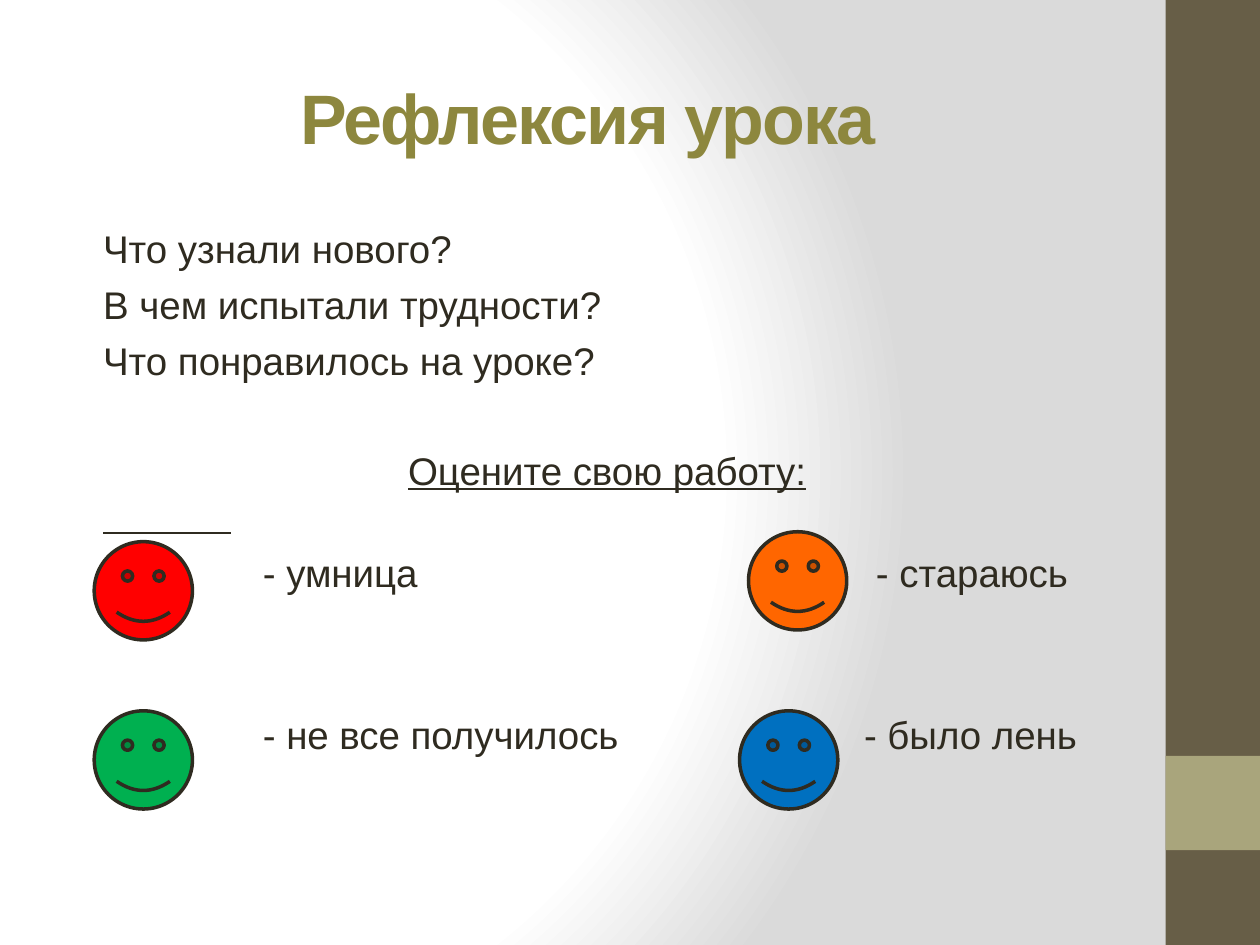
from lxml import etree
from pptx import Presentation
from pptx.dml.color import RGBColor
from pptx.enum.shapes import MSO_CONNECTOR, MSO_SHAPE as Preset
from pptx.enum.text import MSO_ANCHOR as Anchor, PP_ALIGN as Align
from pptx.oxml import parse_xml
from pptx.oxml.ns import qn
from pptx.util import Cm, Pt

COLORS = {"ink": "2F2B20", "title": "8D873E", "band": "675E47", "accent": "A9A57C",
          "red": "FF0000", "green": "00B050", "orange": "FF6600", "blue": "0070C0",
          "white": "FFFFFF", "gray": "DADADA"}
TITLE = "Рефлексия урока"
QUESTIONS = ["Что узнали нового?", "В чем испытали трудности?", "Что понравилось на уроке?"]
HEADING = "Оцените свою работу:"
# label, face colour, face left and top, label left and top (cm)
GRADES = [
    ("- умница", "red", 1.9, 10.92, 5.3, 11.07),
    ("- не все получилось", "green", 1.9, 14.33, 5.3, 14.34),
    ("- стараюсь", "orange", 15.09, 10.72, 17.66, 11.07),
    ("- было лень", "blue", 14.91, 14.33, 17.42, 14.34),
]
BAND = [("band", 0, 19.05), ("accent", 15.24, 1.9)]  # colour, top, height
BAND_LEFT, BAND_WIDTH = 23.5, 1.9
BODY_LEFT, BODY_TOP, BODY_WIDTH = 2.08, 4.54, 20.32
FACE_SIZE, LABEL_WIDTH, LINE_HEIGHT = 1.98, 8, 0.9
GRADIENT = [(0, "white"), (75, "white"), (100, "gray")]


def rgb(name):
    return RGBColor.from_string(COLORS[name])


def paint_background(page):
    """Fill the page with a circular gradient, which has no public method."""
    fill = page.background.fill
    fill.solid()
    fill.fore_color.rgb = rgb("white")
    stops = "".join(f'<a:gs pos="{at * 1000}"><a:srgbClr val="{COLORS[name]}"/></a:gs>'
                    for at, name in GRADIENT)
    gradient = parse_xml(
        '<a:gradFill xmlns:a="http://schemas.openxmlformats.org/drawingml/2006/main" '
        f'rotWithShape="1"><a:gsLst>{stops}</a:gsLst><a:path path="circle">'
        '<a:fillToRect l="20000" t="50000" r="100000" b="50000"/></a:path></a:gradFill>')
    solid = next(page.element.iter(qn("a:solidFill")))
    solid.getparent().replace(solid, gradient)


def add_preset(page, preset, color, left, top, width, height, outline=None):
    shape = page.shapes.add_shape(preset, Cm(left), Cm(top), Cm(width), Cm(height))
    shape.shadow.inherit = False
    shape.fill.solid()
    shape.fill.fore_color.rgb = rgb(color)
    if outline:
        shape.line.color.rgb = rgb(outline)
        shape.line.width = Pt(2)
    else:
        shape.line.fill.background()


def add_box(page, left, top, width, height):
    frame = page.shapes.add_textbox(Cm(left), Cm(top), Cm(width), Cm(height)).text_frame
    frame.word_wrap = True
    frame.margin_left = frame.margin_right = frame.margin_top = frame.margin_bottom = 0
    return frame


def add_span(para, text, size=22, color="ink"):
    span = para.add_run()
    span.text = text
    span.font.name = "Arial"
    span.font.size = Pt(size)
    span.font.color.rgb = rgb(color)
    return span


def add_title(page):
    frame = add_box(page, 1.27, 0.76, 21.16, 3.18)
    frame.vertical_anchor = Anchor.MIDDLE
    para = frame.paragraphs[0]
    para.alignment = Align.CENTER
    span = add_span(para, TITLE, 40, "title")
    span.font.bold = True
    span.font._element.set("spc", "-100")


def add_body(page):
    frame = add_box(page, BODY_LEFT, BODY_TOP, BODY_WIDTH, 5.2)
    for number, question in enumerate(QUESTIONS):
        para = frame.add_paragraph() if number else frame.paragraphs[0]
        para.space_before = Pt(5.5 if number else 0)
        add_span(para, question)
    para = frame.add_paragraph()
    para.alignment = Align.CENTER
    para.space_before = Pt(36.4)
    add_span(para, HEADING).font.underline = True


def add_rule(page, left, right, top):
    rule = page.shapes.add_connector(MSO_CONNECTOR.STRAIGHT, Cm(left), Cm(top), Cm(right), Cm(top))
    rule.line.color.rgb = rgb("ink")
    rule.line.width = Pt(1.15)
    etree.SubElement(rule._element.spPr, qn("a:effectLst"))


def main():
    deck = Presentation()
    deck.slide_width, deck.slide_height = Cm(25.4), Cm(19.05)
    page = deck.slides.add_slide(deck.slide_layouts[6])
    paint_background(page)
    for color, top, height in BAND:
        add_preset(page, Preset.RECTANGLE, color, BAND_LEFT, top, BAND_WIDTH, height)
    add_title(page)
    add_body(page)
    add_rule(page, BODY_LEFT, 4.66, 10.74)
    for label, color, face_left, face_top, left, top in GRADES:
        add_preset(page, Preset.SMILEY_FACE, color, face_left, face_top,
                   FACE_SIZE, FACE_SIZE, outline="ink")
        width = min(LABEL_WIDTH, BAND_LEFT - left)
        add_span(add_box(page, left, top, width, LINE_HEIGHT).paragraphs[0], label)
    deck.save("out.pptx")


if __name__ == "__main__":
    main()
